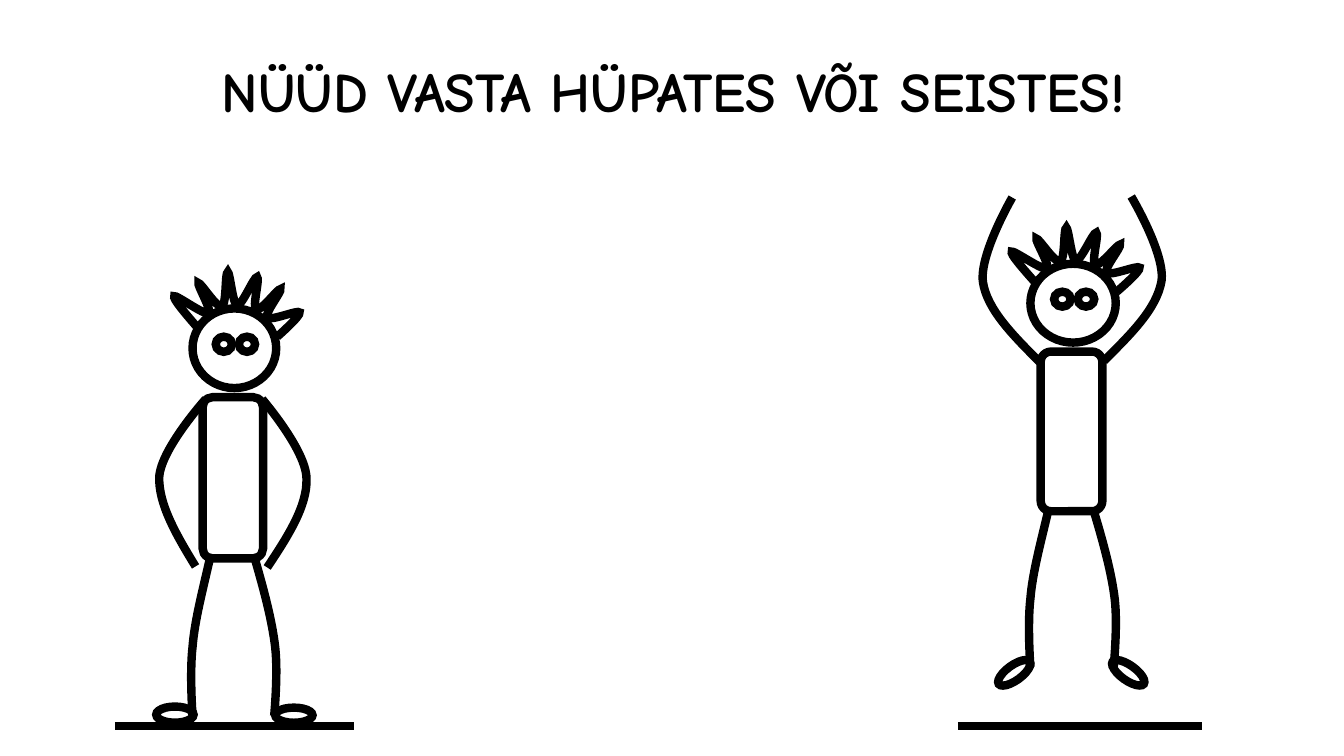
from dataclasses import dataclass

from lxml.etree import SubElement
from pptx import Presentation
from pptx.dml.color import RGBColor
from pptx.enum.shapes import MSO_CONNECTOR, MSO_SHAPE
from pptx.enum.text import MSO_ANCHOR, MSO_AUTO_SIZE, PP_ALIGN
from pptx.oxml.ns import qn
from pptx.util import Inches, Pt

BLACK = "000000"
STROKE = 6
GROUND_Y = 7.2

# Each curve is a start point followed by three points per Bézier segment.
HAIR = [
    (1.95, 3.24), (1.83, 3.1), (1.71, 2.96), (1.73, 2.94),
    (1.74, 2.92), (2.03, 3.13), (2.07, 3.11),
    (2.11, 3.09), (1.95, 2.82), (1.97, 2.81),
    (1.99, 2.8), (2.15, 3.06), (2.2, 3.04),
    (2.25, 3.02), (2.23, 2.7), (2.26, 2.7),
    (2.28, 2.7), (2.31, 3.02), (2.35, 3.03),
    (2.4, 3.04), (2.52, 2.74), (2.55, 2.75),
    (2.58, 2.76), (2.5, 3.05), (2.54, 3.07),
    (2.58, 3.1), (2.76, 2.86), (2.78, 2.87),
    (2.8, 2.89), (2.62, 3.11), (2.65, 3.15),
    (2.68, 3.19), (2.96, 3.07), (2.97, 3.1),
    (2.99, 3.13), (2.75, 3.34), (2.75, 3.34),
]
LEGS = [
    [(2.08, 5.55), (2.01, 5.86), (1.93, 6.16), (1.91, 6.42),
     (1.88, 6.68), (1.91, 7.1), (1.91, 7.1)],
    [(2.53, 5.55), (2.62, 5.86), (2.7, 6.16), (2.73, 6.42),
     (2.76, 6.68), (2.72, 7.1), (2.72, 7.1)],
]
ARMS_ON_HIPS = [
    [(1.94, 5.62), (1.75, 5.31), (1.57, 5), (1.58, 4.73),
     (1.6, 4.45), (2.04, 3.96), (2.04, 3.96)],
    [(2.65, 5.63), (2.85, 5.33), (3.05, 5.02), (3.04, 4.75),
     (3.04, 4.47), (2.6, 3.96), (2.6, 3.96)],
]
ARMS_RAISED = [
    [(10.31, 3.59), (10.05, 3.33), (9.79, 3.07), (9.75, 2.8),
     (9.71, 2.53), (10.04, 1.96), (10.04, 1.96)],
    [(10.95, 3.58), (11.21, 3.32), (11.47, 3.07), (11.52, 2.79),
     (11.56, 2.52), (11.22, 1.95), (11.22, 1.95)],
]
# left, top, width, height, rotation
FEET_STANDING = [(1.55, 7.01, 0.37, 0.16, 0), (2.73, 7.02, 0.37, 0.15, 0)]
FEET_JUMPING = [(9.87, 6.6, 0.38, 0.15, 324), (11, 6.6, 0.38, 0.15, 35.7)]


@dataclass
class Frame:
    """Maps the standing body, with its corner at (1.91, 2.7), to a place on the slide."""
    left: float
    top: float
    scale_x: float = 1
    scale_y: float = 1

    def point(self, x, y):
        return (self.left + (x - 1.91) * self.scale_x,
                self.top + (y - 2.7) * self.scale_y)

    def box(self, left, top, width, height):
        return (*self.point(left, top), width * self.scale_x, height * self.scale_y)


def color(hex_string):
    return RGBColor.from_string(hex_string)


def format_line(shape):
    shape.line.color.rgb = color(BLACK)
    shape.line.width = Pt(STROKE)
    SubElement(shape.line._get_or_add_ln(), qn("a:miter"), lim="800000")


def add_outline(group, kind, left, top, width, height, rotation=0):
    shape = group.shapes.add_shape(
        kind, Inches(left), Inches(top), Inches(width), Inches(height))
    shape.rotation = rotation
    shape.shadow.inherit = False
    shape.fill.background()
    format_line(shape)


def add_curve(group, points):
    """Draws a freeform and turns each three straight segments into one Bézier curve."""
    start, *rest = [(Inches(x), Inches(y)) for x, y in points]
    builder = group.shapes.build_freeform(*start)
    builder.add_line_segments(rest, close=False)
    shape = builder.convert_to_shape()
    segments = list(shape._element.iter(qn("a:lnTo")))
    for index in range(0, len(segments), 3):
        curve = SubElement(segments[index].getparent(), qn("a:cubicBezTo"))
        for segment in segments[index:index + 3]:
            curve.append(segment[0])
            segment.getparent().remove(segment)
    shape.shadow.inherit = False
    shape.fill.background()
    format_line(shape)


def add_ground(group, start, end):
    connector = group.shapes.add_connector(
        MSO_CONNECTOR.STRAIGHT,
        Inches(start), Inches(GROUND_Y), Inches(end), Inches(GROUND_Y))
    format_line(connector)
    SubElement(connector._element.spPr, qn("a:effectLst"))


def add_figure(slide, frame, arms, feet, ground):
    group = slide.shapes.add_group_shape()
    add_outline(group, MSO_SHAPE.ROUNDED_RECTANGLE, *frame.box(2.01, 3.94, 0.6, 1.6))
    add_outline(group, MSO_SHAPE.OVAL, *frame.box(1.91, 3.06, 0.83, 0.79))
    for curve in [*LEGS, HAIR]:
        add_curve(group, [frame.point(x, y) for x, y in curve])
    for foot in feet:
        add_outline(group, MSO_SHAPE.OVAL, *foot)
    for eye_left in (2.14, 2.37):
        add_outline(group, MSO_SHAPE.OVAL, *frame.box(eye_left, 3.34, 0.16, 0.15))
    for arm in arms:
        add_curve(group, arm)
    add_ground(group, *ground)


def write_text(shape, text, *, size, font, hex_color, bold=False,
               alignment=PP_ALIGN.LEFT, line_spacing=1.0):
    frame = shape.text_frame
    frame.word_wrap = True
    frame.auto_size = MSO_AUTO_SIZE.NONE
    frame.vertical_anchor = MSO_ANCHOR.TOP
    paragraph = frame.paragraphs[0]
    paragraph.alignment = alignment
    paragraph.line_spacing = line_spacing
    run = paragraph.add_run()
    run.text = text
    run.font.size = Pt(size)
    run.font.name = font
    run.font.bold = bold
    run.font.color.rgb = color(hex_color)


def add_title(slide, text):
    title = slide.shapes.title
    title.left, title.top = Inches(0.32), Inches(0.59)
    title.width, title.height = Inches(12.72), Inches(1.25)
    write_text(title, text, size=40, font="Comic Neue", hex_color=BLACK,
               bold=True, alignment=PP_ALIGN.CENTER, line_spacing=0.9)


def main():
    presentation = Presentation()
    presentation.slide_width = Inches(13.33)
    presentation.slide_height = Inches(7.5)
    slide = presentation.slides.add_slide(presentation.slide_layouts[5])
    add_title(slide, "NÜÜD VASTA HÜPATES VÕI SEISTES!")
    add_figure(slide, Frame(1.91, 2.7), ARMS_ON_HIPS, FEET_STANDING, (1.14, 3.51))
    add_figure(slide, Frame(10.22, 2.26, 1.02, 0.99), ARMS_RAISED, FEET_JUMPING,
               (9.5, 11.92))
    presentation.save("out.pptx")


if __name__ == "__main__":
    main()
